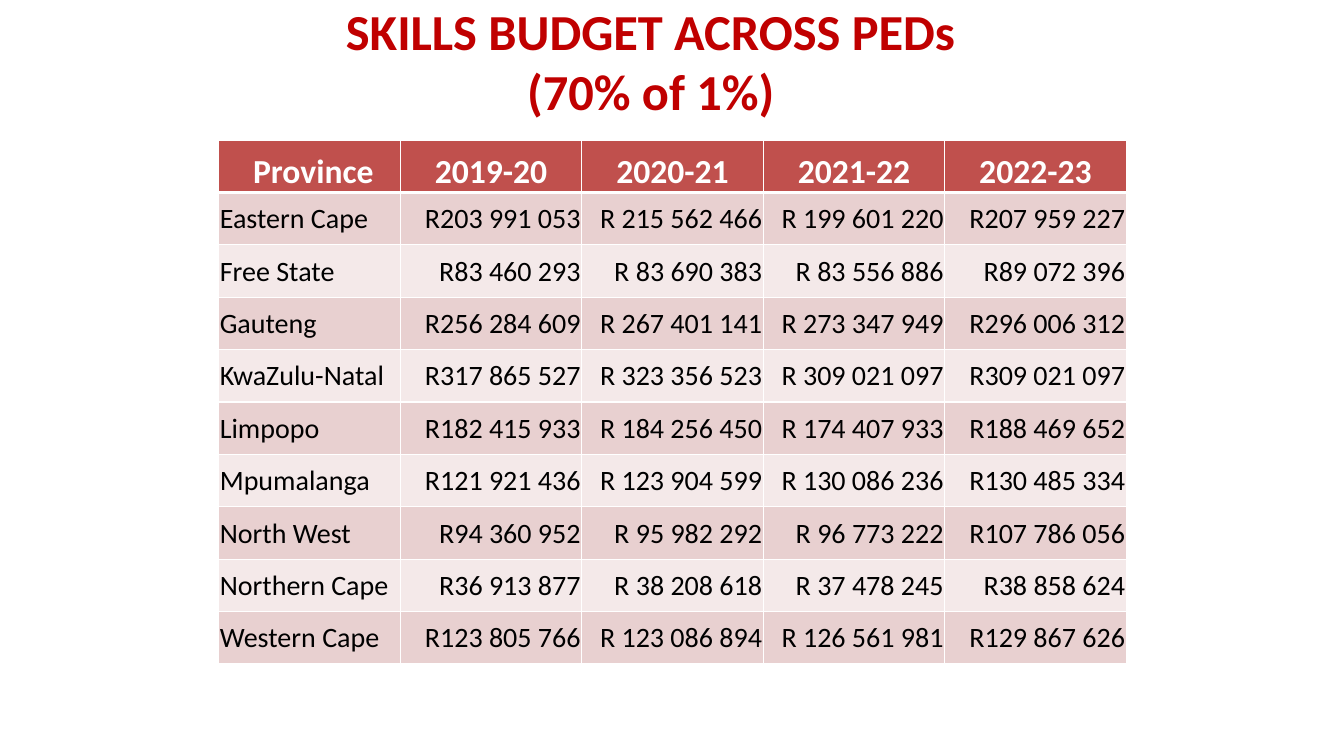
from pptx import Presentation
from pptx import util as u
from pptx.dml.color import RGBColor
from pptx.enum import text
from pptx.oxml.ns import qn
from lxml import etree

FONT = "Calibri"
TITLE_RED = RGBColor(0xC0, 0x00, 0x00)
HEADER_RED = RGBColor(0xC0, 0x50, 0x4D)
DARK_BAND = RGBColor(0xE8, 0xD0, 0xD0)
LIGHT_BAND = RGBColor(0xF4, 0xE9, 0xE9)
WHITE = RGBColor(0xFF, 0xFF, 0xFF)
BLACK = RGBColor(0x00, 0x00, 0x00)

TITLE_LINES = ["SKILLS BUDGET ACROSS PEDs", "(70% of 1%)"]
HEADERS = [" Province", "2019-20", "2020-21", "2021-22", "2022-23"]
BUDGETS = [
    ["Eastern Cape", "R203 991 053", "R 215 562 466", "R 199 601 220", "R207 959 227"],
    ["Free State", "R83 460 293", "R 83 690 383", "R 83 556 886", "R89 072 396"],
    ["Gauteng", "R256 284 609", "R 267 401 141", "R 273 347 949", "R296 006 312"],
    ["KwaZulu-Natal", "R317 865 527", "R 323 356 523", "R 309 021 097", "R309 021 097"],
    ["Limpopo", "R182 415 933", "R 184 256 450", "R 174 407 933", "R188 469 652"],
    ["Mpumalanga", "R121 921 436", "R 123 904 599", "R 130 086 236", "R130 485 334"],
    ["North West", "R94 360 952", "R 95 982 292", "R 96 773 222", "R107 786 056"],
    ["Northern Cape", "R36 913 877", "R 38 208 618", "R 37 478 245", "R38 858 624"],
    ["Western Cape", "R123 805 766", "R 123 086 894", "R 126 561 981", "R129 867 626"],
]


def add_run(paragraph, words, size, color, bold=False):
    run = paragraph.add_run()
    run.text = words
    run.font.name = FONT
    run.font.size = u.Pt(size)
    run.font.bold = bold
    run.font.color.rgb = color


def add_title(slide, left, top, width, height):
    shape = slide.shapes.add_textbox(left, top, width, height)
    frame = shape.text_frame
    frame.word_wrap = True
    frame.vertical_anchor = text.MSO_ANCHOR.MIDDLE
    paragraph = frame.paragraphs[0]
    paragraph.alignment = text.PP_ALIGN.CENTER
    for index, line in enumerate(TITLE_LINES):
        if index:
            paragraph.add_line_break()
        add_run(paragraph, line, 36, TITLE_RED, bold=True)


def set_borders(cell, bottom_width):
    properties = cell._tc.get_or_add_tcPr()
    widths = {"a:lnL": 1, "a:lnR": 1, "a:lnT": 1, "a:lnB": bottom_width}
    for position, (tag, width) in enumerate(widths.items()):
        line = etree.Element(qn(tag), w=str(u.Pt(width)))
        fill = etree.SubElement(line, qn("a:solidFill"))
        etree.SubElement(fill, qn("a:srgbClr"), val=str(WHITE))
        properties.insert(position, line)


def fill_cell(cell, words, row, column):
    header = row == 0
    cell.margin_left = cell.margin_right = cell.margin_top = u.Inches(0.01)
    cell.margin_bottom = 0
    paragraph = cell.text_frame.paragraphs[0]
    cell.fill.solid()
    if header:
        cell.fill.fore_color.rgb = HEADER_RED
        cell.vertical_anchor = text.MSO_ANCHOR.BOTTOM
        paragraph.alignment = text.PP_ALIGN.CENTER
        add_run(paragraph, words, 24, WHITE, bold=True)
    else:
        cell.fill.fore_color.rgb = DARK_BAND if row % 2 else LIGHT_BAND
        cell.vertical_anchor = text.MSO_ANCHOR.MIDDLE
        paragraph.alignment = text.PP_ALIGN.RIGHT if column else text.PP_ALIGN.LEFT
        add_run(paragraph, words, 20, BLACK)
    set_borders(cell, 3 if header else 1)


def add_budget_table(slide, left, top, width, height):
    rows = [HEADERS] + BUDGETS
    shape = slide.shapes.add_table(len(rows), len(HEADERS), left, top, width, height)
    for row, entries in enumerate(rows):
        for column, words in enumerate(entries):
            fill_cell(shape.table.cell(row, column), words, row, column)


def main():
    presentation = Presentation()
    presentation.slide_width = u.Inches(13.33)
    presentation.slide_height = u.Inches(7.5)
    slide = presentation.slides.add_slide(presentation.slide_layouts[6])
    add_title(slide, u.Inches(1.67), u.Inches(0.13), u.Inches(9.57), u.Inches(0.94))
    add_budget_table(slide, u.Inches(2.17), u.Inches(1.39), u.Inches(9), u.Inches(5.2))
    presentation.save("out.pptx")


if __name__ == "__main__":
    main()
